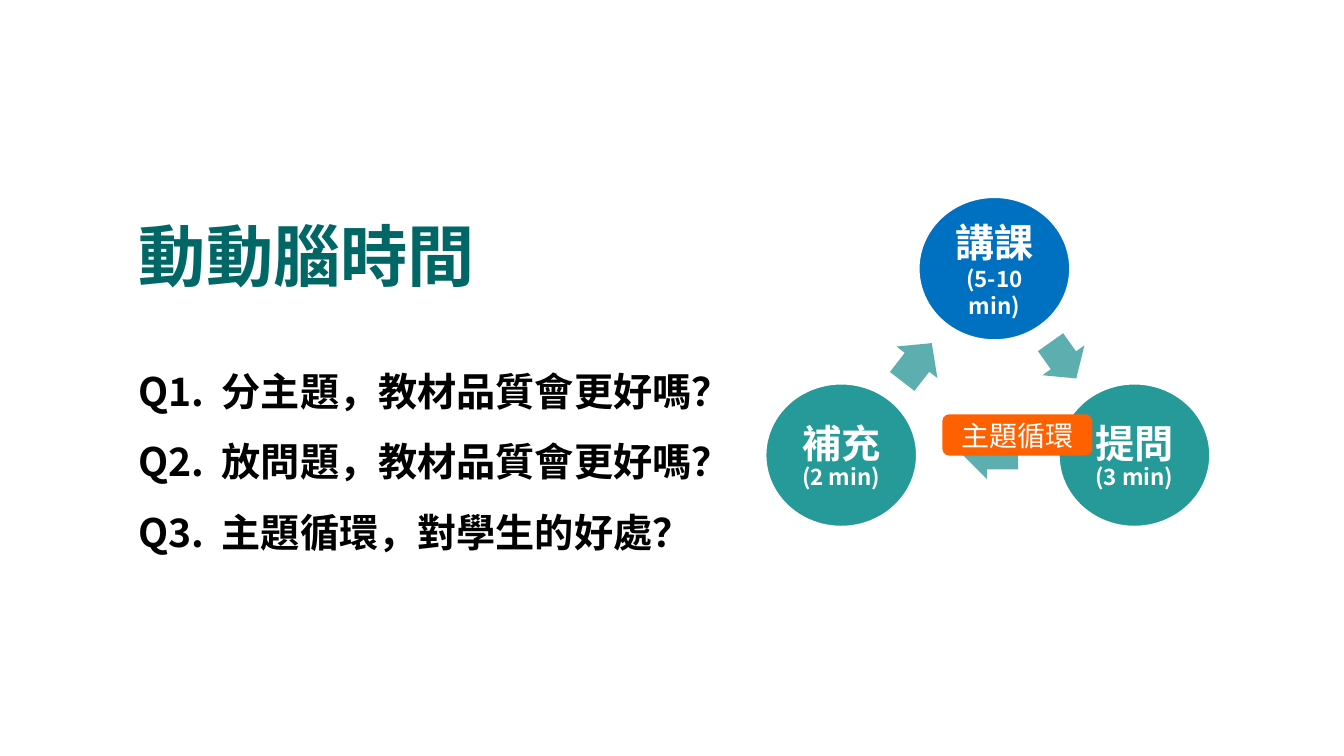
from typing import NamedTuple

from lxml import etree
from pptx import Presentation
from pptx.dml.color import RGBColor
from pptx.enum import shapes, text
from pptx.oxml.ns import qn
from pptx.util import Cm, Pt

FONT = "Noto Sans CJK SC"
WHITE = RGBColor(0xFF, 0xFF, 0xFF)
BLACK = RGBColor(0x00, 0x00, 0x00)
DARK_TEAL = RGBColor(0x00, 0x66, 0x66)
TEAL = RGBColor(0x26, 0x99, 0x99)
PALE_TEAL = RGBColor(0x5D, 0xAE, 0xAE)
BLUE = RGBColor(0x00, 0x70, 0xC0)
ORANGE = RGBColor(0xFF, 0x60, 0x00)

CIRCLE_WIDTH, CIRCLE_HEIGHT = 3.84, 3.63
QUESTION_INDENT = Cm(2.11)


class Stage(NamedTuple):
    name: str
    duration: str
    center_x: float
    center_y: float
    color: RGBColor
    tight: bool


class Arrow(NamedTuple):
    center_x: float
    center_y: float
    width: float
    height: float
    rotation: float


STAGES = [
    Stage("講課", "(5-10 min)", 25.06, 6.77, BLUE, False),
    Stage("提問", "(3 min)", 28.59, 11.47, TEAL, True),
    Stage("補充", "(2 min)", 21.2, 11.47, TEAL, True),
]
ARROWS = [
    Arrow(26.8, 9.08, 1.12, 1.3, 54.6),
    Arrow(24.96, 11.46, 1.4, 1.22, 180),
    Arrow(23.11, 9.13, 1.22, 1.3, 307.7),
]
QUESTIONS = [
    "Q1.\t分主題，教材品質會更好嗎？",
    "Q2.\t放問題，教材品質會更好嗎？",
    "Q3.\t主題循環，對學生的好處？",
]


def format_runs(para, size: float, color: RGBColor, bold: bool = True) -> None:
    for span in para.runs:
        span.font.size = Pt(size)
        span.font.bold = bold
        span.font.color.rgb = color
        span.font.name = FONT
        east_asian = etree.SubElement(span.font._element, qn("a:ea"))
        east_asian.set("typeface", FONT)


def add_text_box(page, left: float, top: float, width: float, height: float):
    box = page.shapes.add_textbox(Cm(left), Cm(top), Cm(width), Cm(height))
    box.text_frame.word_wrap = True
    return box.text_frame


def add_filled_shape(page, kind, center_x: float, center_y: float,
                     width: float, height: float, color: RGBColor):
    """Add a plain shape without outline or shadow, placed by its centre in cm."""
    shape = page.shapes.add_shape(
        kind, Cm(center_x - width / 2), Cm(center_y - height / 2),
        Cm(width), Cm(height))
    shape.shadow.inherit = False
    shape.fill.solid()
    shape.fill.fore_color.rgb = color
    shape.line.fill.background()
    return shape


def add_stage(page, stage: Stage) -> None:
    circle = add_filled_shape(page, shapes.MSO_SHAPE.OVAL, stage.center_x,
                              stage.center_y, CIRCLE_WIDTH, CIRCLE_HEIGHT,
                              stage.color)
    circle.line.color.rgb = WHITE
    circle.line.width = Pt(2)
    frame = circle.text_frame
    frame.word_wrap = True
    frame.vertical_anchor = text.MSO_ANCHOR.MIDDLE
    frame.margin_left = frame.margin_right = Cm(0.1)
    frame.margin_top = frame.margin_bottom = Cm(0.1)
    frame.text = f"{stage.name}\n{stage.duration}"
    for para, size in zip(frame.paragraphs, (28, 16)):
        para.alignment = text.PP_ALIGN.CENTER
        format_runs(para, size, WHITE)
    if stage.tight:
        duration = frame.paragraphs[1]
        duration.line_spacing = 0.9
        duration.space_after = Pt(5.6)


def add_arrow(page, arrow: Arrow) -> None:
    shape = add_filled_shape(page, shapes.MSO_SHAPE.RIGHT_ARROW, arrow.center_x,
                             arrow.center_y, arrow.width, arrow.height, PALE_TEAL)
    shape.rotation = arrow.rotation
    shape.adjustments[0] = 0.6
    shape.adjustments[1] = 0.5


def add_title(page) -> None:
    frame = add_text_box(page, 3.25, 4.22, 13.18, 3.33)
    frame.vertical_anchor = text.MSO_ANCHOR.BOTTOM
    frame.text = "動動腦時間"
    para = frame.paragraphs[0]
    para.line_spacing = 1.3
    format_runs(para, 48, DARK_TEAL)


def add_questions(page) -> None:
    frame = add_text_box(page, 3.23, 8.53, 16.61, 5.41)
    frame.auto_size = text.MSO_AUTO_SIZE.SHAPE_TO_FIT_TEXT
    frame.text = "\n".join(QUESTIONS)
    for para in frame.paragraphs:
        para.line_spacing = 1.5
        properties = para._p.get_or_add_pPr()
        properties.set("marL", str(QUESTION_INDENT))
        properties.set("indent", str(-QUESTION_INDENT))
        format_runs(para, 28, BLACK)


def add_cycle_label(page) -> None:
    label = add_filled_shape(page, shapes.MSO_SHAPE.ROUNDED_RECTANGLE,
                             25.64, 10.96, 3.78, 1.04, ORANGE)
    frame = label.text_frame
    frame.vertical_anchor = text.MSO_ANCHOR.MIDDLE
    frame.text = "主題循環"
    para = frame.paragraphs[0]
    para.alignment = text.PP_ALIGN.CENTER
    format_runs(para, 20, WHITE, bold=False)


def main() -> None:
    deck = Presentation()
    deck.slide_width, deck.slide_height = Cm(33.87), Cm(19.05)
    page = deck.slides.add_slide(deck.slide_layouts[6])
    add_title(page)
    add_questions(page)
    for stage, arrow in zip(STAGES, ARROWS):
        add_stage(page, stage)
        add_arrow(page, arrow)
    add_cycle_label(page)
    deck.save("out.pptx")


if __name__ == "__main__":
    main()
